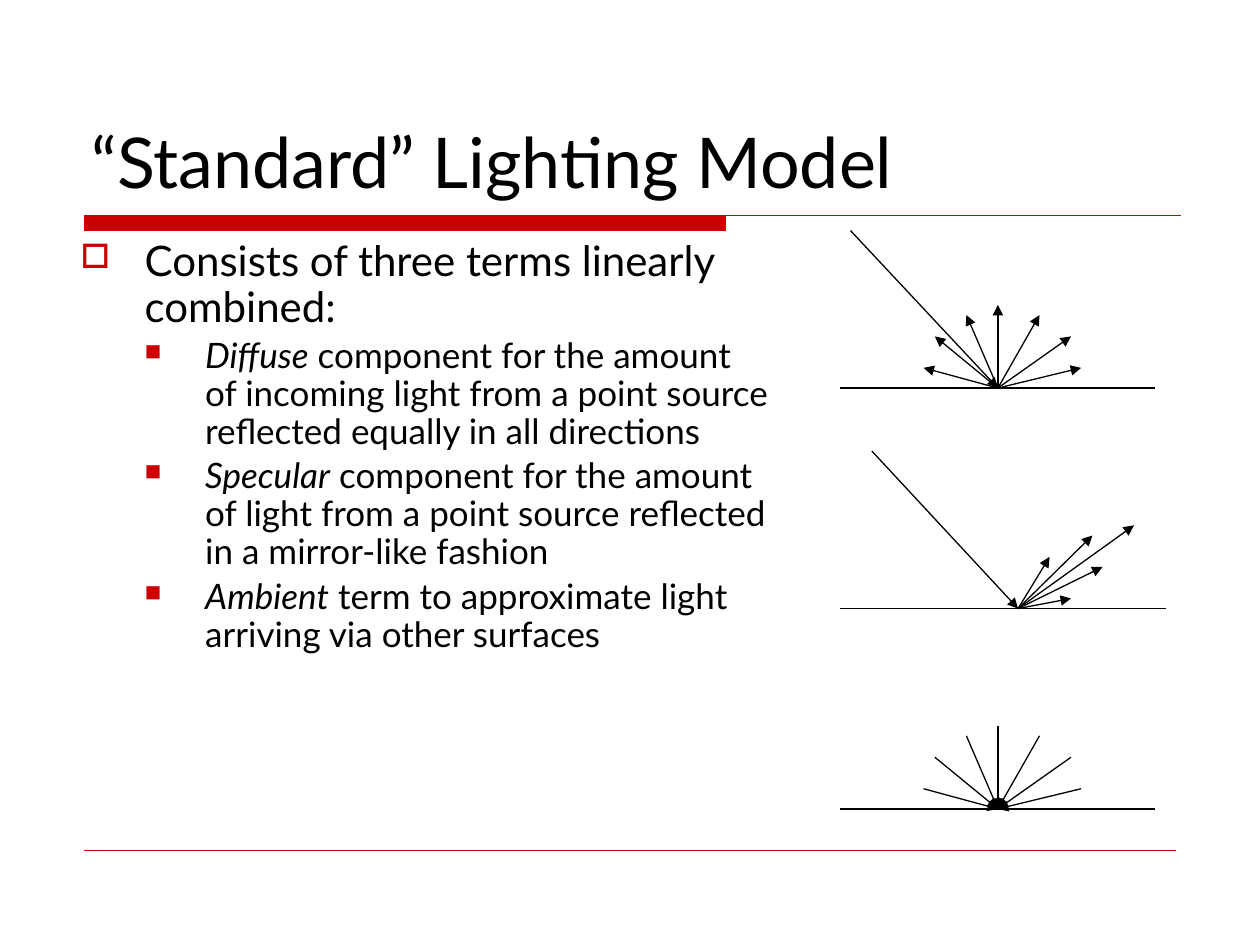
from lxml import etree
from pptx import Presentation
from pptx import util as u
from pptx.dml.color import RGBColor
from pptx.enum import shapes, text
from pptx.oxml.ns import qn

THEME = {"font": "Lato", "ink": "000000", "accent": "CC0000",
         "title": 40, "term": 24, "detail": 20}

TITLE = "“Standard” Lighting Model"
# (level, italic lead, remaining text)
POINTS = [
    (0, "", "Consists of three terms linearly combined:"),
    (1, "Diffuse", " component for the amount of incoming light from a point source "
                   "reflected equally in all directions"),
    (1, "Specular", " component for the amount of light from a point source "
                    "reflected in a mirror-like fashion"),
    (1, "Ambient", " term to approximate light arriving via other surfaces"),
]
LEVELS = [
    {"size": THEME["term"], "left": 0.51, "hanging": 0.51, "bullet": "□", "percent": 80},
    {"size": THEME["detail"], "left": 0.99, "hanging": 0.48, "bullet": "■", "percent": 65},
]

# Ray tips as (right, up) offsets from the point where light meets the surface
FAN = [(0.66, 0.16), (0.58, 0.41), (0.33, 0.58), (0, 0.66),
       (-0.25, 0.58), (-0.5, 0.41), (-0.59, 0.16)]
LOBE = [(0.92, 0.66), (0.59, 0.58), (0.67, 0.33), (0.25, 0.41), (0.42, 0.08)]
SURFACE_LEFT = 6.67
DIAGRAMS = [
    {"hit": (7.92, 3.08), "right": 9.17, "source": (6.75, 1.83), "rays": FAN, "arrow": "tailEnd"},
    {"hit": (8.08, 4.83), "right": 9.25, "source": (6.92, 3.58), "rays": LOBE, "arrow": "tailEnd"},
    {"hit": (7.92, 6.42), "right": 9.17, "source": None, "rays": FAN, "arrow": "headEnd"},
]


def color(name):
    return RGBColor.from_string(THEME[name])


def add_line(slide, start, end, ink="ink", width=0.75, arrow=None):
    """Draw a straight line; arrow is None, 'headEnd' (at start) or 'tailEnd' (at end)."""
    line = slide.shapes.add_connector(
        shapes.MSO_CONNECTOR.STRAIGHT, *(u.Inches(value) for value in (*start, *end)))
    line.line.color.rgb = color(ink)
    line.line.width = u.Pt(width)
    properties = line._element.spPr
    if arrow:
        etree.SubElement(properties.find(qn("a:ln")), qn(f"a:{arrow}"), type="triangle")
    etree.SubElement(properties, qn("a:effectLst"))


def add_text_frame(slide, left, top, width, height, anchor):
    box = slide.shapes.add_textbox(*(u.Inches(v) for v in (left, top, width, height)))
    frame = box.text_frame
    frame.word_wrap = True
    frame.vertical_anchor = anchor
    return frame


def add_run(paragraph, content, size, italic=False):
    run = paragraph.add_run()
    run.text = content
    run.font.name = THEME["font"]
    run.font.size = u.Pt(size)
    run.font.italic = italic
    run.font.color.rgb = color("ink")


def set_bullet(paragraph, style):
    properties = paragraph._p.get_or_add_pPr()
    properties.set("marL", str(u.Inches(style["left"])))
    properties.set("indent", str(-u.Inches(style["hanging"])))
    bullet_color = etree.SubElement(properties, qn("a:buClr"))
    etree.SubElement(bullet_color, qn("a:srgbClr"), val=THEME["accent"])
    etree.SubElement(properties, qn("a:buSzPct"), val=str(style["percent"] * 1000))
    etree.SubElement(properties, qn("a:buChar"), char=style["bullet"])


def add_title_rule(slide, left=0.67, top=1.71, bar_right=5.76, bottom=1.83, right=9.37):
    """Draw a thick bar that continues as a thin line, as one outline."""
    def point(x, y):
        return u.Inches(x), u.Inches(y)

    builder = slide.shapes.build_freeform(*point(left, top))
    builder.add_line_segments(
        [point(bar_right, top), point(bar_right, bottom), point(left, bottom)], close=True)
    builder.move_to(*point(left, top))
    builder.add_line_segments([point(right, top)], close=False)
    rule = builder.convert_to_shape()
    rule.shadow.inherit = False
    rule.fill.solid()
    rule.fill.fore_color.rgb = color("accent")
    rule.line.color.rgb = color("accent")
    rule.line.width = u.Pt(0.75)


def add_points(slide):
    frame = add_text_frame(slide, 0.54, 1.86, 5.67, 4.48, text.MSO_ANCHOR.TOP)
    for index, (level, lead, rest) in enumerate(POINTS):
        paragraph = frame.add_paragraph() if index else frame.paragraphs[0]
        style = LEVELS[level]
        paragraph.level = level
        paragraph.line_spacing = 0.9
        paragraph.space_before = u.Pt(style["size"] * 0.2)
        set_bullet(paragraph, style)
        if lead:
            add_run(paragraph, lead, style["size"], italic=True)
        add_run(paragraph, rest, style["size"])


def add_diagram(slide, hit, right, source, rays, arrow):
    x, y = hit
    add_line(slide, (SURFACE_LEFT, y), (right, y))
    if source:
        add_line(slide, source, hit, arrow="tailEnd")
    for across, up in rays:
        add_line(slide, hit, (x + across, y - up), arrow=arrow)


def main():
    presentation = Presentation()
    presentation.slide_width, presentation.slide_height = u.Inches(10), u.Inches(7.5)
    slide = presentation.slides.add_slide(presentation.slide_layouts[6])
    add_title_rule(slide)
    add_line(slide, (0.67, 6.75), (9.33, 6.75), ink="accent", width=0.25)
    title = add_text_frame(slide, 0.63, 0.33, 8.75, 1.33, text.MSO_ANCHOR.BOTTOM)
    add_run(title.paragraphs[0], TITLE, THEME["title"])
    add_points(slide)
    for diagram in DIAGRAMS:
        add_diagram(slide, **diagram)
    presentation.save("out.pptx")


if __name__ == "__main__":
    main()
